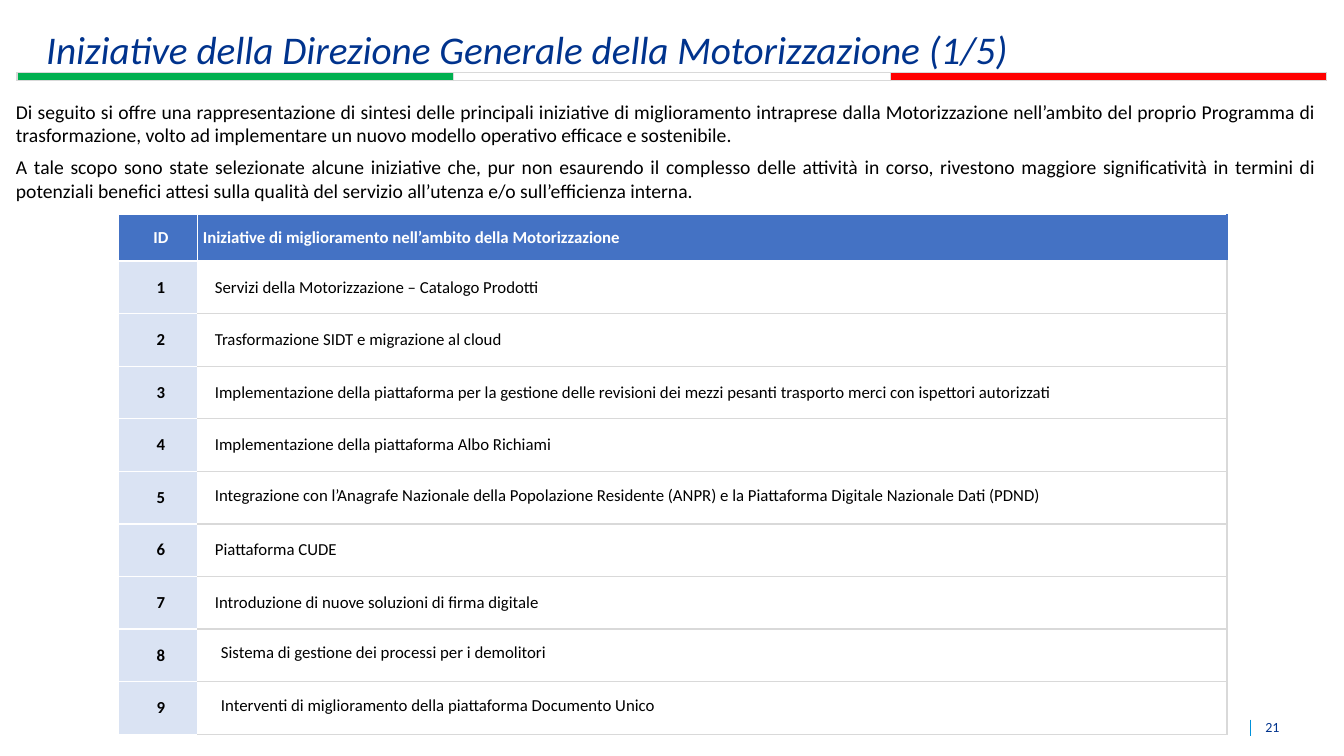
from dataclasses import dataclass
from typing import Optional

from lxml.etree import SubElement
from pptx import Presentation
from pptx.dml.color import RGBColor
from pptx.enum.shapes import MSO_CONNECTOR as Connector, MSO_SHAPE as Shape
from pptx.enum.text import MSO_ANCHOR as Anchor, PP_ALIGN as Align
from pptx.oxml import parse_xml
from pptx.oxml.ns import nsdecls, qn
from pptx.util import Inches, Length, Pt

WHITE = RGBColor(0xFF, 0xFF, 0xFF)
BLACK = RGBColor(0x00, 0x00, 0x00)
NAVY = RGBColor(0x00, 0x33, 0x8D)
SKY = RGBColor(0x00, 0x91, 0xDA)
GREEN = RGBColor(0x00, 0xB0, 0x50)
RED = RGBColor(0xFF, 0x00, 0x00)
GREY = RGBColor(0xD9, 0xD9, 0xD9)
BLUE = RGBColor(0x44, 0x72, 0xC4)
PALE = RGBColor(0xDA, 0xE3, 0xF3)

WIDTH, HEIGHT = Inches(13.33), Inches(7.5)
FONT = "Calibri"


def across(percent: float) -> Length:
    return Length(round(WIDTH * percent / 100))


def down(percent: float) -> Length:
    return Length(round(HEIGHT * percent / 100))


@dataclass
class Band:
    start: int
    count: int
    colour: RGBColor


@dataclass
class Initiative:
    text: str
    margin: float = 0.9
    indent: float = 0.38
    line_points: Optional[int] = None


BANDS = [Band(0, 3, WHITE), Band(0, 1, GREEN), Band(2, 1, RED)]
BAND_LEFT, BAND_WIDTH = 1.28, 32.48

TITLE = "Iniziative della Direzione Generale della Motorizzazione (1/5)"
INTRO = [
    "Di seguito si offre una rappresentazione di sintesi delle principali iniziative di miglioramento "
    "intraprese dalla Motorizzazione nell’ambito del proprio Programma di trasformazione, volto ad "
    "implementare un nuovo modello operativo efficace e sostenibile.",
    "A tale scopo sono state selezionate alcune iniziative che, pur non esaurendo il complesso delle "
    "attività in corso, rivestono maggiore significatività in termini di potenziali benefici attesi "
    "sulla qualità del servizio all’utenza e/o sull’efficienza interna.",
]
HEADING = "Iniziative di miglioramento nell’ambito della Motorizzazione"
INITIATIVES = [
    Initiative("Servizi della Motorizzazione – Catalogo Prodotti"),
    Initiative("Trasformazione SIDT e migrazione al cloud"),
    Initiative("Implementazione della piattaforma per la gestione delle revisioni dei mezzi pesanti "
               "trasporto merci con ispettori autorizzati"),
    Initiative("Implementazione della piattaforma Albo Richiami"),
    Initiative("Integrazione con l’Anagrafe Nazionale della Popolazione Residente (ANPR) e la "
               "Piattaforma Digitale Nazionale Dati (PDND)", line_points=12),
    Initiative("Piattaforma CUDE"),
    Initiative("Introduzione di nuove soluzioni di firma digitale"),
    Initiative("Sistema di gestione dei processi per i demolitori", 0.6, 1.13, 11),
    Initiative("Interventi di miglioramento della piattaforma Documento Unico", 0.6, 1.13, 11),
]


def write(frame, *texts: str, size: float, colour: RGBColor, bold: bool = False,
          italic: bool = False, align: Align = Align.LEFT, gap: float = 0,
          indent: float = 0, line_points: Optional[int] = None) -> None:
    frame.word_wrap = True
    for index, text in enumerate(texts):
        para = frame.add_paragraph() if index else frame.paragraphs[0]
        para.alignment = align
        if index:
            para.space_before = Pt(gap)
        if indent:
            para._p.get_or_add_pPr().set("marL", str(across(indent)))
        if line_points:
            para.line_spacing = Pt(line_points)
        span = para.add_run()
        span.text = text
        span.font.name, span.font.size = FONT, Pt(size)
        span.font.bold, span.font.italic = bold, italic
        span.font.color.rgb = colour


def add_box(page, left: float, top: float, width: float, height: float):
    return page.shapes.add_textbox(across(left), down(top), across(width), down(height)).text_frame


def add_band(page, band: Band) -> None:
    stripe = page.shapes.add_shape(
        Shape.RECTANGLE, across(BAND_LEFT + band.start * BAND_WIDTH), down(9.6),
        across(band.count * BAND_WIDTH), down(1.07))
    stripe.shadow.inherit = False
    stripe.fill.solid()
    stripe.fill.fore_color.rgb = band.colour
    stripe.line.color.rgb = GREY
    stripe.line.width = Pt(1)


def set_borders(cell, left: RGBColor, right: RGBColor, top: RGBColor, bottom: RGBColor) -> None:
    properties = cell._tc.get_or_add_tcPr()
    for index, (side, colour) in enumerate(zip("LRTB", (left, right, top, bottom))):
        properties.insert(index, parse_xml(
            f'<a:ln{side} {nsdecls("a")} w="{Pt(1)}"><a:solidFill>'
            f'<a:srgbClr val="{colour}"/></a:solidFill></a:ln{side}>'))


def fill_cell(cell, text: str, fill: Optional[RGBColor], margin: float = 0, **text_format) -> None:
    cell.margin_left = across(margin)
    cell.margin_right = cell.margin_top = cell.margin_bottom = 0
    cell.vertical_anchor = Anchor.MIDDLE
    if fill is None:
        cell.fill.background()
    else:
        cell.fill.solid()
        cell.fill.fore_color.rgb = fill
    write(cell.text_frame, text, size=12, **text_format)


def add_initiatives(page) -> None:
    columns, header, row = (5.93, 76.59), 6.13, 6.96
    count = len(INITIATIVES)
    table = page.shapes.add_table(count + 1, 2, across(8.78), down(28.4),
                                  across(sum(columns)), down(header + count * row)).table
    for column, width in zip(table.columns, columns):
        column.width = across(width)
    for index, line in enumerate(table.rows):
        line.height = down(row if index else header)

    for index in range(count + 1):
        number = table.cell(index, 0)
        fill_cell(number, str(index) if index else "ID", PALE if index else BLUE, bold=True,
                  colour=BLACK if index else WHITE, align=Align.CENTER, indent=0.45)
        set_borders(number, WHITE, WHITE, WHITE, WHITE)

    heading = table.cell(0, 1)
    fill_cell(heading, HEADING, BLUE, bold=True, colour=WHITE, indent=0.38)
    set_borders(heading, WHITE, BLUE, WHITE, WHITE)
    for index, item in enumerate(INITIATIVES, 1):
        cell = table.cell(index, 1)
        fill_cell(cell, item.text, None, item.margin, colour=BLACK,
                  indent=item.indent, line_points=item.line_points)
        set_borders(cell, WHITE, GREY, WHITE if index == 1 else GREY, GREY)


def add_page_number(page) -> None:
    frame = add_box(page, 93.17, 95.2, 2.03, 2.13)
    frame.margin_left = frame.margin_right = frame.margin_top = frame.margin_bottom = 0
    frame.vertical_anchor = Anchor.BOTTOM
    write(frame, "21", size=10, colour=NAVY, align=Align.RIGHT)
    rule = page.shapes.add_connector(Connector.STRAIGHT, across(93.02), down(95.2),
                                     across(93.02), down(97.33))
    rule.line.color.rgb = SKY
    rule.line.width = Pt(0.5)
    SubElement(rule._element.spPr, qn("a:effectLst"))


def main() -> None:
    deck = Presentation()
    deck.slide_width, deck.slide_height = WIDTH, HEIGHT
    page = deck.slides.add_slide(deck.slide_layouts[6])
    add_page_number(page)
    write(add_box(page, 2.7, 2.67, 96.02, 7.6), TITLE, size=28, colour=NAVY, italic=True)
    for band in BANDS:
        add_band(page, band)
    add_initiatives(page)
    write(add_box(page, 0.45, 12.53, 98.27, 19.33), *INTRO, size=14, colour=BLACK,
          align=Align.JUSTIFY, gap=6)
    deck.save("out.pptx")


if __name__ == "__main__":
    main()
